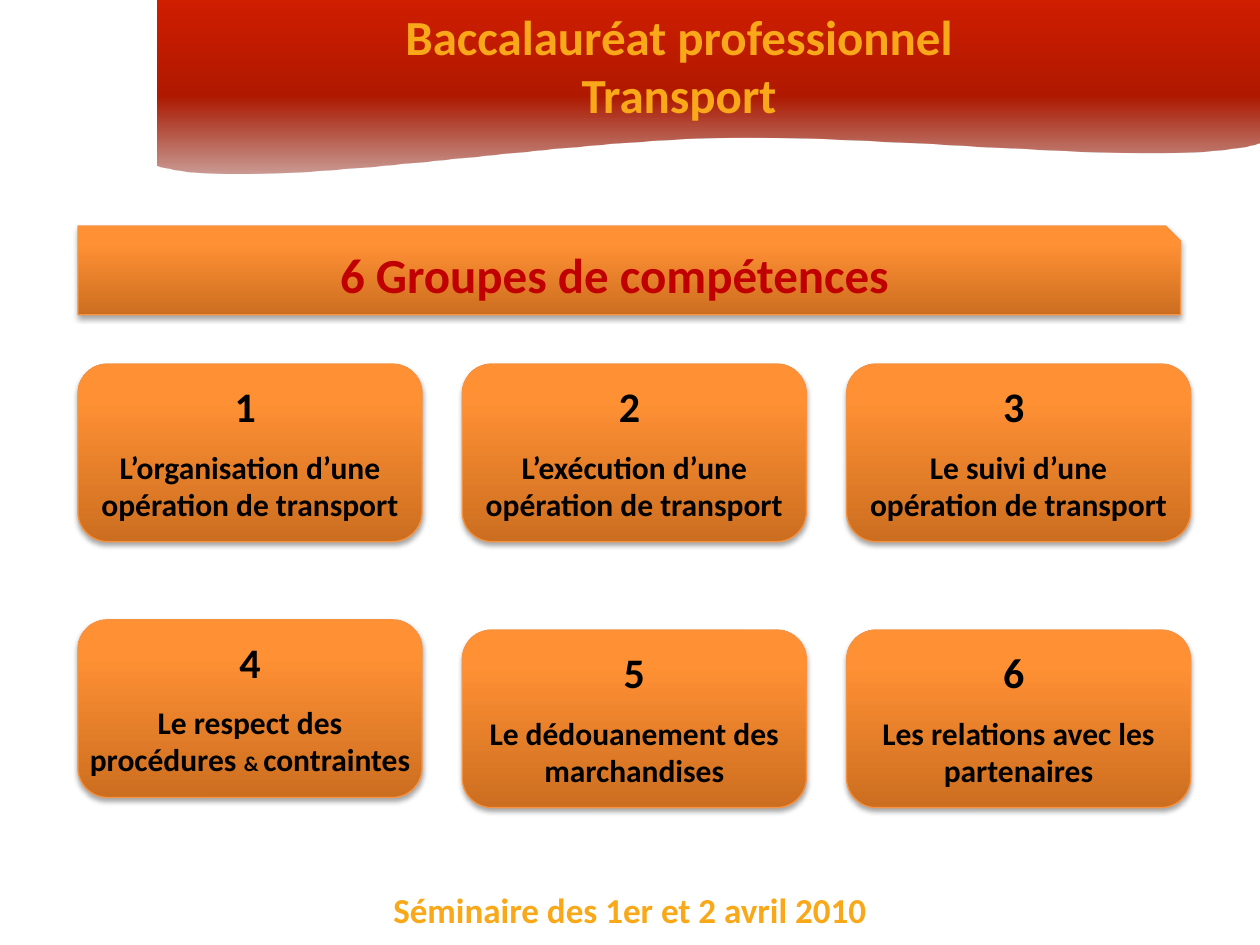
import pptx
import pptx.util
import pptx.dml.color
import pptx.enum.shapes
import pptx.enum.text
import pptx.oxml
import pptx.oxml.ns
from dataclasses import dataclass
from lxml import etree

Pt = pptx.util.Pt
RGB = pptx.dml.color.RGBColor.from_string
Shape = pptx.enum.shapes.MSO_SHAPE
Text = pptx.enum.text
qn = pptx.oxml.ns.qn


@dataclass(frozen=True)
class Theme:
    font: str = "Calibri"
    gold: str = "F8A818"
    red: str = "C00000"
    ink: str = "000000"
    edge: str = "F69240"
    wave: tuple = ((0, "851300", 42), (45, "AF1900", 100), (100, "D01D00", 100))
    flame: tuple = ((0, "CC6E20", 100), (80, "FF9034", 100), (100, "FF9136", 100))
    title: int = 28
    digit: int = 24
    foot: int = 20
    body: int = 18
    small: int = 12


THEME = Theme()
LEFT = 44.6
CARDS = (
    ("1 ", ["L’organisation d’une opération de transport "]),
    ("2 ", ["L’exécution d’une opération de transport "]),
    ("3 ", ["Le suivi d’une opération de transport "]),
    ("4", ["Le respect des procédures ", "& ", "contraintes"]),
    ("5", ["Le dédouanement des marchandises"]),
    ("6 ", ["Les relations avec les partenaires"]),
)


def add_tint(parent, color, alpha):
    tint = etree.SubElement(parent, qn("a:srgbClr"), val=color)
    etree.SubElement(tint, qn("a:alpha"), val=str(alpha * 1000))


def blend(shape, stops):
    shape.fill.gradient()
    shape.fill.gradient_angle = 90
    group = shape._element.spPr.find(".//" + qn("a:gsLst"))
    for old in list(group):
        group.remove(old)
    for place, color, alpha in stops:
        stop = etree.SubElement(group, qn("a:gs"), pos=str(place * 1000))
        add_tint(stop, color, alpha)


def shade(shape):
    shape.shadow.inherit = False
    effects = shape._element.spPr.find(qn("a:effectLst"))
    drop = etree.SubElement(
        effects, qn("a:outerShdw"), blurRad=str(Pt(3.1)), dist=str(Pt(1.8)),
        dir="5400000", rotWithShape="0")
    add_tint(drop, THEME.ink, 35)


def style(para, size, color):
    para.alignment = Text.PP_ALIGN.CENTER
    for run in para.runs:
        run.font.name = THEME.font
        run.font.size = Pt(size)
        run.font.bold = True
        run.font.color.rgb = RGB(color)


def add_label(slide, box, text, size):
    frame = slide.shapes.add_textbox(*map(Pt, box)).text_frame
    frame.word_wrap = True
    frame.auto_size = Text.MSO_AUTO_SIZE.SHAPE_TO_FIT_TEXT
    frame.text = text
    for para in frame.paragraphs:
        style(para, size, THEME.gold)


def trace(start, first, second, end, count=40):
    for step in range(1, count + 1):
        t = step / count
        u = 1 - t
        yield tuple(
            u**3 * a + 3 * u * u * t * b + 3 * u * t * t * c + t**3 * d
            for a, b, c, d in zip(start, first, second, end))


def add_wave(slide):
    right, mid, left = (720, 81.4), (410.4, 78.5), (90, 94.3)
    points = [(720, 0), right]
    points += trace(right, (669, 96.5), (515.5, 76.3), mid)
    points += trace(mid, (305.3, 80.6), (143.3, 110.2), left)
    pen = slide.shapes.build_freeform(Pt(90), 0)
    pen.add_line_segments([(Pt(x), Pt(y)) for x, y in points], close=True)
    wave = pen.convert_to_shape()
    blend(wave, THEME.wave)
    wave.line.fill.background()
    wave.shadow.inherit = False


def add_panel(slide, kind, box):
    panel = slide.shapes.add_shape(kind, *map(Pt, box))
    blend(panel, THEME.flame)
    panel.line.color.rgb = RGB(THEME.edge)
    panel.line.width = Pt(0.75)
    shade(panel)
    panel.text_frame.word_wrap = True
    panel.text_frame.vertical_anchor = Text.MSO_ANCHOR.MIDDLE
    return panel


def add_header(slide):
    panel = add_panel(slide, Shape.SNIP_1_RECTANGLE, (LEFT, 129.2, 630, 50.6))
    frame = panel.text_frame
    frame.margin_right = Pt(20)
    frame.text = "6 Groupes de compétences"
    style(frame.paragraphs[0], THEME.title, THEME.red)


def add_card(slide, x, y, inset, digit, parts):
    panel = add_panel(slide, Shape.ROUNDED_RECTANGLE, (x, y, 196.6, 101.5))
    frame = panel.text_frame
    frame.margin_left = frame.margin_right = Pt(inset)
    frame.margin_top, frame.margin_bottom = Pt(4.3), Pt(3.6)
    frame.text = digit
    head, body = frame.paragraphs[0], frame.add_paragraph()
    for part in parts:
        body.add_run().text = part
    style(head, THEME.digit, THEME.ink)
    style(body, THEME.body, THEME.ink)
    head.line_spacing = body.line_spacing = 0.98
    body.space_before = Pt(9.5)
    for run in body.runs:
        if run.text.startswith("&"):
            run.font.size = Pt(THEME.small)


def main():
    deck = pptx.Presentation()
    deck.slide_width, deck.slide_height = Pt(720), Pt(540)
    slide = deck.slides.add_slide(deck.slide_layouts[6])
    add_label(slide, (180, 504, 360, 31.5),
              "Séminaire des 1er et 2 avril 2010", THEME.foot)
    add_wave(slide)
    add_label(slide, (208, 0, 360, 75),
              "Baccalauréat professionnel\nTransport", THEME.title)
    for index, (digit, parts) in enumerate(CARDS):
        row, column = divmod(index, 3)
        y = 208 + 152 * row
        inset = 7.2
        if len(parts) > 1:
            y -= 5.8
            inset = 1.4
        add_card(slide, LEFT + 219.6 * column, y, inset, digit, parts)
    add_header(slide)
    deck.save("out.pptx")


if __name__ == "__main__":
    main()
